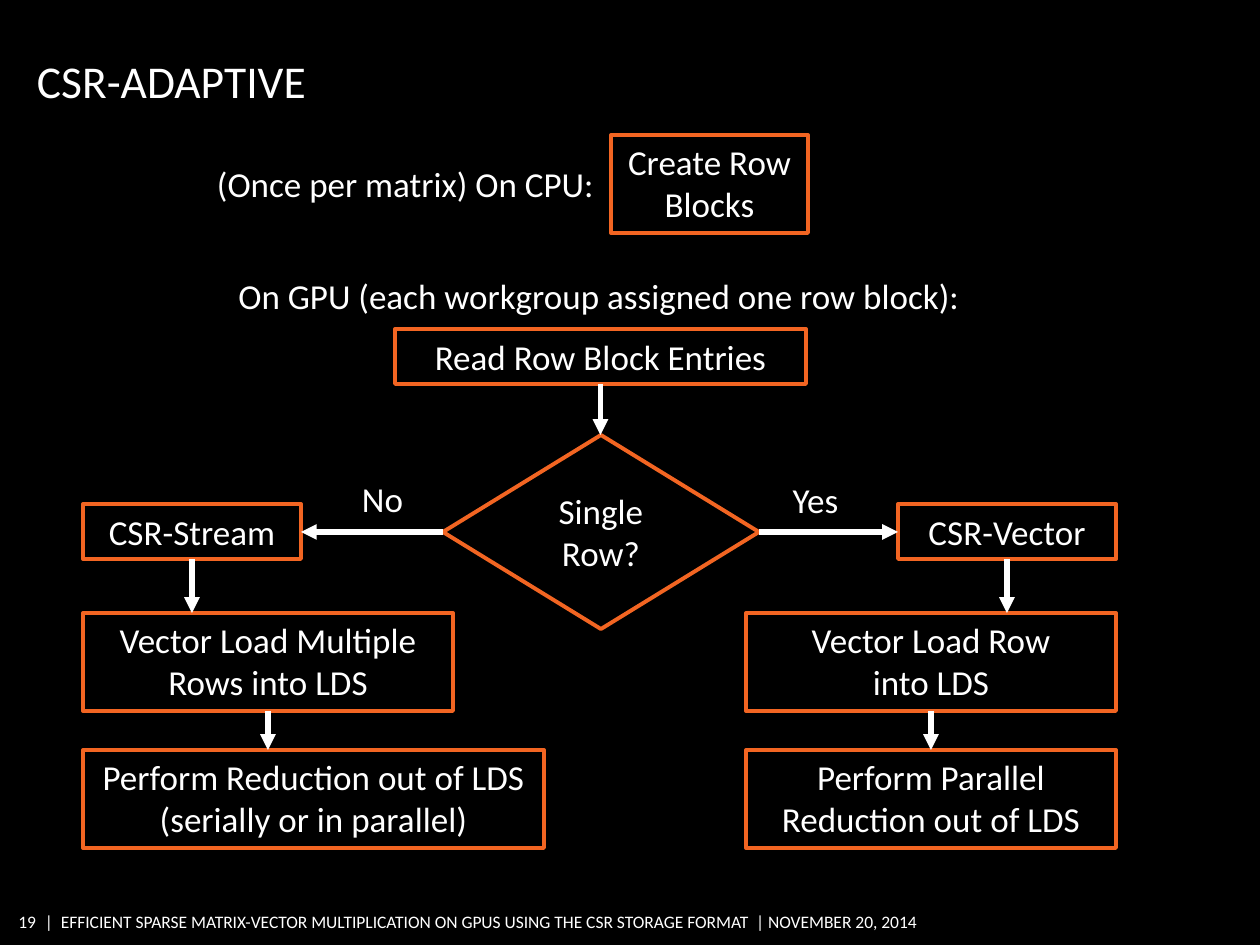
"""Build the CSR-Adaptive flowchart slide."""
import pptx
import pptx.dml.color
import pptx.enum.shapes
import pptx.enum.text
import pptx.oxml
import pptx.oxml.ns
import pptx.util

ALIGN = pptx.enum.text.PP_ALIGN
ANCHOR = pptx.enum.text.MSO_ANCHOR
FIT = pptx.enum.text.MSO_AUTO_SIZE
SHAPE = pptx.enum.shapes.MSO_SHAPE
SCALE = 914400 / 126
WHITE, ORANGE, BLACK = "FFFFFF", "F26522", "000000"

FOOTER = ("|  EFFICIENT SPARSE MATRIX-VECTOR MULTIPLICATION ON GPUS USING "
          "THE CSR STORAGE FORMAT  | NOVEMBER 20, 2014")
FOOTER_STYLE = dict(size=10, anchor=ANCHOR.MIDDLE, margins=(0, 5, 0, 5), wrap=False)
LABELS = [
    ("19", (16, 905, 20, 33), dict(FOOTER_STYLE, align=ALIGN.RIGHT)),
    (FOOTER, (45, 905, 892, 33), dict(FOOTER_STYLE, align=ALIGN.LEFT)),
    ("CSR-ADAPTIVE", (37, 43, 1033, 65),
     dict(size=26, align=ALIGN.LEFT, anchor=ANCHOR.BOTTOM, margins=(0, 6, 0, 0), fit=FIT.NONE)),
    ("(Once per matrix) On CPU:", (204, 156, 406, 55), dict(align=ALIGN.LEFT, wrap=False)),
    ("On GPU (each workgroup assigned one row block):", (223, 268, 752, 55), dict(wrap=False)),
    ("Yes", (759, 472, 113, 55), {}),
    ("No", (326, 471, 113, 55), {}),
]

LEFT, RIGHT = 83, 1116
ONE_LINE, TWO_LINES = 55, 98
METHOD_TOP, LOAD_TOP, REDUCE_TOP = 504, 613, 750
METHOD_WIDTH, STEP_WIDTH = 218, 370
STEPS = {
    "create": ("Create Row Blocks", (611, 135, 197, TWO_LINES)),
    "read": ("Read Row Block Entries", (395, 329, 411, ONE_LINE)),
    "single": ("Single Row?", (443, 435, 316, 194)),
    "vector": ("CSR-Vector", (RIGHT - METHOD_WIDTH, METHOD_TOP, METHOD_WIDTH, ONE_LINE)),
    "stream": ("CSR-Stream", (LEFT, METHOD_TOP, METHOD_WIDTH, ONE_LINE)),
    "load rows": ("Vector Load Multiple Rows into LDS", (LEFT, LOAD_TOP, STEP_WIDTH, TWO_LINES)),
    "reduce rows": ("Perform Reduction out of LDS\n(serially or in parallel)",
                    (LEFT, REDUCE_TOP, 461, TWO_LINES)),
    "load row": ("Vector Load Row\ninto LDS",
                 (RIGHT - STEP_WIDTH, LOAD_TOP, STEP_WIDTH, TWO_LINES)),
    "reduce row": ("Perform Parallel Reduction out of LDS",
                   (RIGHT - STEP_WIDTH, REDUCE_TOP, STEP_WIDTH, TWO_LINES)),
}
DOWNWARD = [("read", "single"), ("vector", "load row"), ("load row", "reduce row"),
            ("stream", "load rows"), ("load rows", "reduce rows")]


def px(*lengths):
    return [pptx.util.Emu(round(length * SCALE)) for length in lengths]


def color(value):
    return pptx.dml.color.RGBColor.from_string(value)


def write(holder, text, *, size=20, align=ALIGN.CENTER, anchor=ANCHOR.TOP,
          margins=(13, 6, 13, 6), wrap=True, fit=FIT.SHAPE_TO_FIT_TEXT):
    frame = holder.text_frame
    frame.text = text
    frame.word_wrap = wrap
    frame.auto_size = fit
    frame.vertical_anchor = anchor
    (frame.margin_left, frame.margin_top,
     frame.margin_right, frame.margin_bottom) = px(*margins)
    for paragraph in frame.paragraphs:
        paragraph.alignment = align
        paragraph.font.name = "Calibri"
        paragraph.font.size = pptx.util.Pt(size)
        paragraph.font.color.rgb = color(WHITE)


def add_step(slide, text, place, kind):
    step = slide.shapes.add_shape(kind, *px(*place))
    step.shadow.inherit = False
    step.fill.background()
    step.line.color.rgb = color(ORANGE)
    step.line.width = pptx.util.Pt(2.25)
    write(step, text)


def add_arrow(slide, *ends):
    arrow = slide.shapes.add_connector(pptx.enum.shapes.MSO_CONNECTOR.STRAIGHT, *px(*ends))
    arrow.line.color.rgb = color(WHITE)
    arrow.line.width = pptx.util.Pt(3)
    head = pptx.oxml.parse_xml(f'<a:tailEnd {pptx.oxml.ns.nsdecls("a")} type="triangle"/>')
    arrow.line._get_or_add_ln().append(head)
    effects = pptx.oxml.parse_xml(f'<a:effectLst {pptx.oxml.ns.nsdecls("a")}/>')
    arrow._element.spPr.append(effects)


def main():
    deck = pptx.Presentation()
    deck.slide_width, deck.slide_height = px(1260, 945)
    slide = deck.slides.add_slide(deck.slide_layouts[6])
    slide.background.fill.solid()
    slide.background.fill.fore_color.rgb = color(BLACK)

    for text, place, style in LABELS:
        write(slide.shapes.add_textbox(*px(*place)), text, **style)
    for key, (text, place) in STEPS.items():
        add_step(slide, text, place, SHAPE.DIAMOND if key == "single" else SHAPE.RECTANGLE)

    for upper, lower in DOWNWARD:
        left, top, width, height = STEPS[upper][1]
        center = left + width / 2
        add_arrow(slide, center, top + height, center, STEPS[lower][1][1])

    left, top, width, height = STEPS["single"][1]
    middle = top + height / 2
    add_arrow(slide, left, middle, LEFT + METHOD_WIDTH, middle)
    add_arrow(slide, left + width, middle, RIGHT - METHOD_WIDTH, middle)
    deck.save("out.pptx")


if __name__ == "__main__":
    main()
